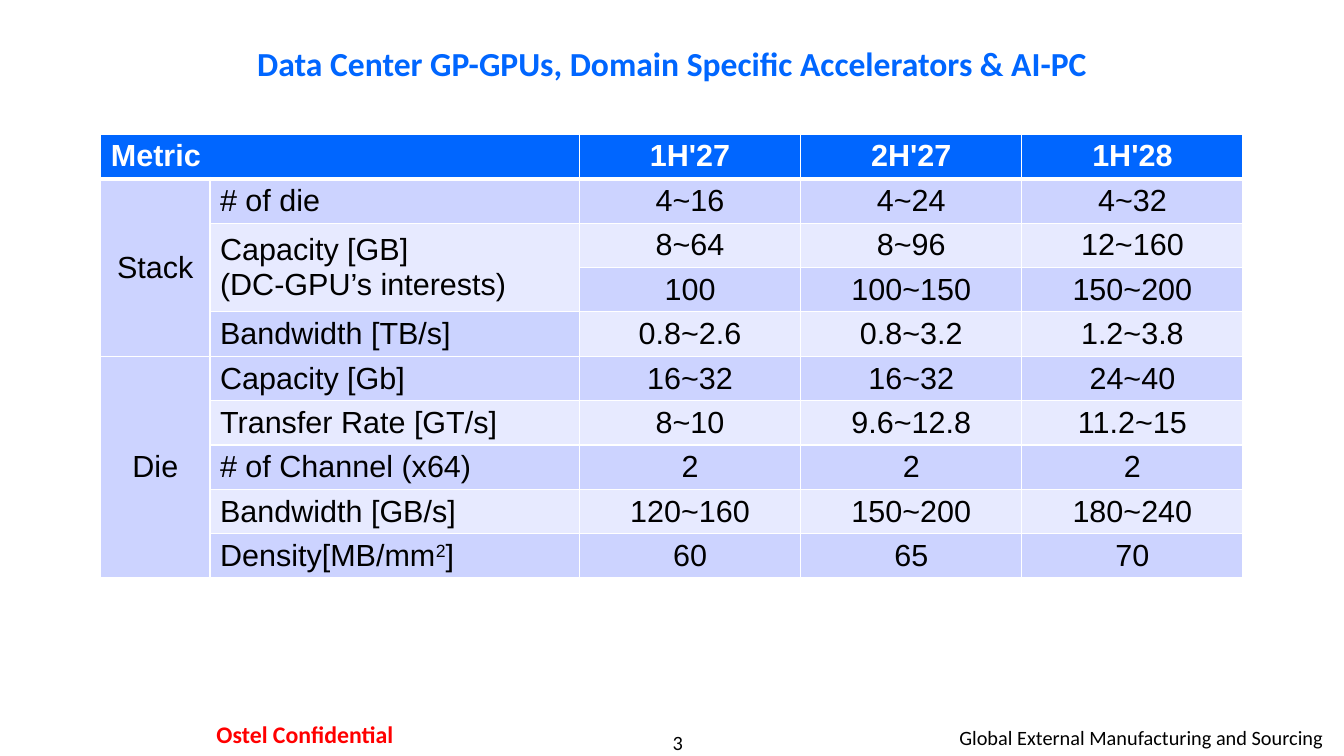
from dataclasses import dataclass

from lxml.etree import SubElement
from pptx import Presentation
from pptx.dml.color import RGBColor
from pptx.enum.text import MSO_ANCHOR, MSO_AUTO_SIZE, PP_ALIGN
from pptx.oxml import parse_xml
from pptx.oxml.ns import nsdecls, qn
from pptx.util import Pt


@dataclass(frozen=True)
class Theme:
    """Colours, fonts and type sizes of the slide."""
    blue: str = "0066FF"
    red: str = "FF0000"
    black: str = "000000"
    white: str = "FFFFFF"
    bands: tuple = ("E7EAFF", "CCD3FF")
    tint: str = "CBD3FF"
    sans: str = "Calibri"
    grid: str = "Arial"
    head: float = 24
    cell: float = 21.8
    mark: float = 17
    foot: float = 14.5


THEME = Theme()
HEAD = ["Metric", None, "1H'27", "2H'27", "1H'28"]
ROWS = [
    ["Stack", "# of die", "4~16", "4~24", "4~32"],
    [None, "Capacity [GB]\n(DC-GPU’s interests)", "8~64", "8~96", "12~160"],
    [None, None, "100", "100~150", "150~200"],
    [None, "Bandwidth [TB/s]", "0.8~2.6", "0.8~3.2", "1.2~3.8"],
    ["Die", "Capacity [Gb]", "16~32", "16~32", "24~40"],
    [None, "Transfer Rate [GT/s]", "8~10", "9.6~12.8", "11.2~15"],
    [None, "# of Channel (x64)", "2", "2", "2"],
    [None, "Bandwidth [GB/s]", "120~160", "150~200", "180~240"],
    [None, "Density[MB/mm^2^]", "60", "65", "70"],
]
SPANS = [(0, 0, 0, 1), (1, 0, 4, 0), (2, 1, 3, 1), (5, 0, 9, 0)]
COLS = [78, 264, 158, 158, 158]


def apply(item, form):
    """Set every attribute named in the format dict."""
    for key, val in form.items():
        setattr(item, key, val)


def write(frame, text, font, size, ink, bold=False, align=PP_ALIGN.LEFT):
    """Fill a text frame; parts between carets are raised."""
    for num, line in enumerate(text.split("\n")):
        para = frame.add_paragraph() if num else frame.paragraphs[0]
        para.alignment = align
        for part, word in enumerate(line.split("^")):
            run = para.add_run()
            run.text = word
            apply(run.font, {"name": font, "size": Pt(size), "bold": bold})
            run.font.color.rgb = RGBColor.from_string(ink)
            if part % 2:
                run.font._element.set("baseline", "30000")


def place(shape, box):
    """Move a shape to the given box in points."""
    names = ("left", "top", "width", "height")
    apply(shape, dict(zip(names, map(Pt, box))))


def title(slide, box):
    """Place and format the slide title."""
    shape = slide.shapes.title
    place(shape, box)
    frame = shape.text_frame
    apply(frame, {"word_wrap": True, "auto_size": MSO_AUTO_SIZE.NONE,
                  "vertical_anchor": MSO_ANCHOR.MIDDLE})
    write(frame, "Data Center GP-GPUs, Domain Specific Accelerators & AI-PC",
          THEME.sans, THEME.head, THEME.blue, True, PP_ALIGN.CENTER)


def edge(cell, base):
    """Draw white borders, with the given bottom width."""
    props = cell._tc.get_or_add_tcPr()
    for num, side in enumerate("LRTB"):
        width = Pt(base if side == "B" else 1)
        line = parse_xml(f'<a:ln{side} {nsdecls("a")} w="{width}"/>')
        fill = SubElement(line, qn("a:solidFill"))
        SubElement(fill, qn("a:srgbClr"), val=THEME.white)
        props.insert(num, line)


def metrics(slide, box):
    """Build the table of metrics by half year."""
    data = [HEAD, *ROWS]
    shape = slide.shapes.add_table(len(data), len(COLS), *map(Pt, box))
    table = shape.table
    for col, width in zip(table.columns, COLS):
        col.width = Pt(width)
    for row in table.rows:
        row.height = Pt(box[3] / len(data))
    for top, left, low, right in SPANS:
        table.cell(top, left).merge(table.cell(low, right))
    for r, line in enumerate(data):
        for c, text in enumerate(line):
            cell = table.cell(r, c)
            fill = THEME.bands[r % 2] if r else THEME.blue
            if (r, c) == (4, 1):
                fill = THEME.tint
            cell.fill.solid()
            cell.fill.fore_color.rgb = RGBColor.from_string(fill)
            edge(cell, 1 if r else 3)
            apply(cell, {"margin_top": Pt(3), "margin_bottom": Pt(3),
                         "vertical_anchor": MSO_ANCHOR.MIDDLE if r
                         else MSO_ANCHOR.TOP})
            if text:
                mid = c > 1 or (r and c == 0)
                write(cell.text_frame, text, THEME.grid, THEME.cell,
                      THEME.black if r else THEME.white, not r,
                      PP_ALIGN.CENTER if mid else PP_ALIGN.LEFT)


def label(slide, box, pad, text, **form):
    """Add a footer text with side and top padding."""
    shape = slide.shapes.add_textbox(*map(Pt, box))
    side, top = map(Pt, pad)
    apply(shape.text_frame, {"word_wrap": True, "margin_left": side,
                             "margin_right": side, "margin_top": top,
                             "margin_bottom": top})
    write(shape.text_frame, text, THEME.sans, **form)


def footer(slide, box):
    """Place the mark, page number and group name in the footer."""
    left, top, width, high = box
    label(slide, (left + 111.6, top, 212.4, high), (8.64, 4.32),
          "Ostel Confidential", size=THEME.mark, ink=THEME.red, bold=True,
          align=PP_ALIGN.CENTER)
    label(slide, (left + 400.3, top + 11.5, 167.8, 17.3), (0, 0),
          "3", size=THEME.foot, ink=THEME.black, align=PP_ALIGN.CENTER)
    label(slide, (left + width - 324, top + 5, 316, 25.2), (7.2, 3.6),
          "Global External Manufacturing and Sourcing", size=THEME.foot,
          ink=THEME.black, align=PP_ALIGN.RIGHT)


def main():
    """Build and save the slide."""
    deck = Presentation()
    apply(deck, {"slide_width": Pt(960), "slide_height": Pt(540)})
    slide = deck.slides.add_slide(deck.slide_layouts[5])
    title(slide, (72, 12.2, 816, 66.2))
    metrics(slide, (72, 96, 816, 317))
    footer(slide, (0, 509.8, 960, 29.5))
    deck.save("out.pptx")


if __name__ == "__main__":
    main()
